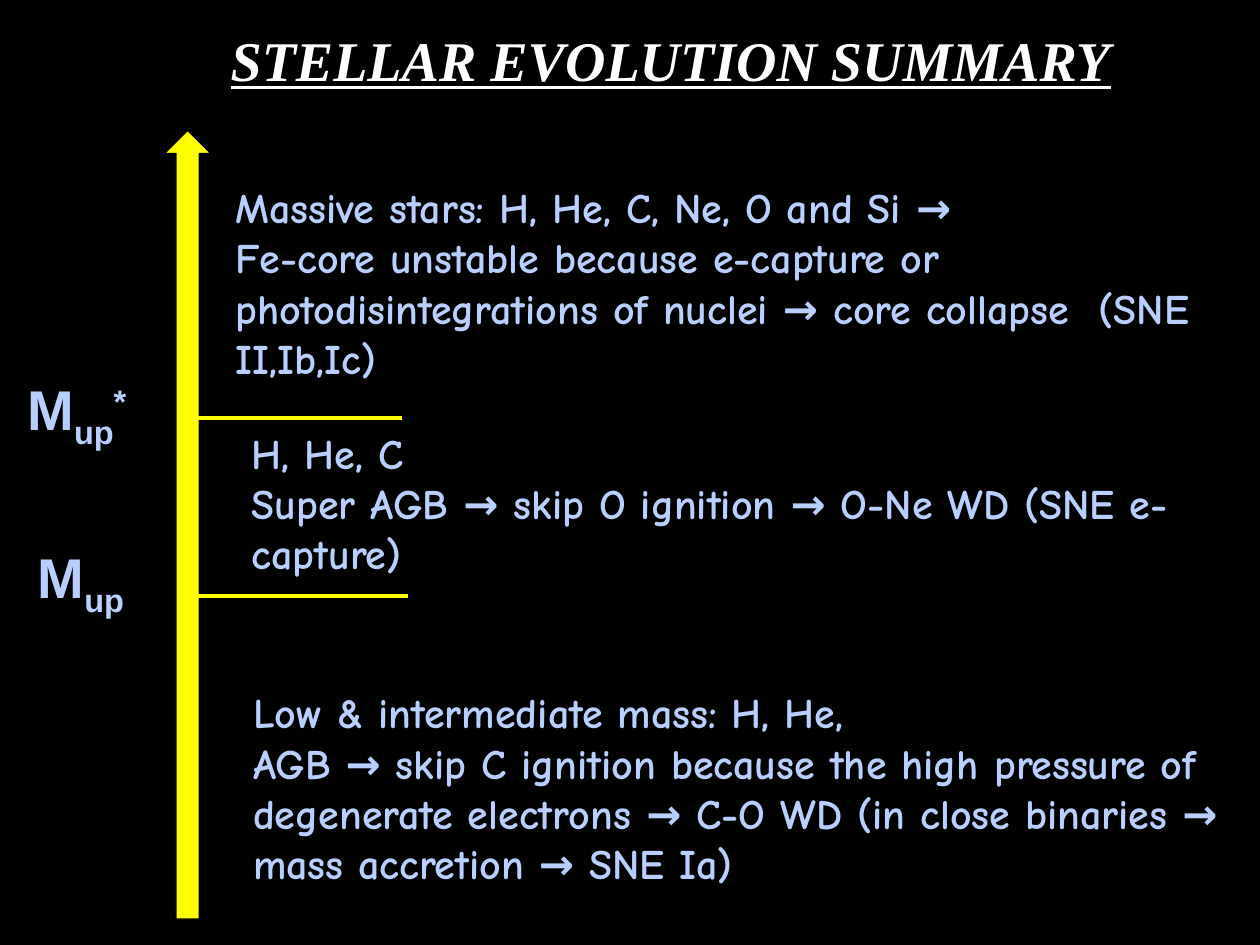
from dataclasses import dataclass

from lxml import etree
from pptx import Presentation
from pptx.dml.color import RGBColor
from pptx.enum import shapes, text
from pptx.oxml import ns
from pptx.util import Pt


@dataclass(frozen=True)
class Theme:
    back: RGBColor = RGBColor(0, 0, 0)
    axis: RGBColor = RGBColor(0xFF, 0xFF, 0)
    body: RGBColor = RGBColor(0xB8, 0xCF, 0xFF)
    head: RGBColor = RGBColor(0xFF, 0xFF, 0xFF)
    large: int = 32
    small: int = 24


THEME = Theme()

# Left, top, width, height in points
TITLE = (122.4, 10.8, 522, 46)
ARROW = (94, 74.5, 26.6, 450.7)

# Left and top of the tick, width, then the label box and its runs with baseline
TICKS = [
    ((107.3, 239, 122.4), (8.6, 210.2, 76.3, 46), [("M", 0), ("up", -25), ("*", 30)]),
    ((110.9, 340.6, 122.4), (14.4, 306.7, 67.7, 46), [("M", 0), ("up", -25)]),
]

STAGES = [
    ((127.4, 100.1, 580.3, 123.8),
     "Massive stars: H, He, C, Ne, O and Si →\n"
     "Fe-core unstable because e-capture or photodisintegrations of nuclei"
     " → core collapse  (SNE II,Ib,Ic)"),
    ((136.8, 240.5, 546.5, 94.3),
     "H, He, C\n"
     "Super AGB → skip O ignition → O-Ne WD (SNE e-capture)"),
    ((137.5, 388.8, 579.6, 123.8),
     "Low & intermediate mass: H, He,\n"
     "AGB → skip C ignition because the high pressure of degenerate electrons"
     " → C-O WD (in close binaries → mass accretion → SNE Ia)"),
]


def add_frame(slide, box, wrap):
    frame = slide.shapes.add_textbox(*map(Pt, box)).text_frame
    frame.word_wrap = wrap
    frame.auto_size = text.MSO_AUTO_SIZE.SHAPE_TO_FIT_TEXT
    return frame


def style(run, face, size, color):
    font = run.font
    font.name, font.size, font.bold = face, Pt(size), True
    font.color.rgb = color


def add_title(slide, box):
    frame = add_frame(slide, box, False)
    frame.text = "STELLAR EVOLUTION SUMMARY"
    line = frame.paragraphs[0]
    line.alignment = text.PP_ALIGN.CENTER
    run = line.runs[0]
    style(run, "Times New Roman", THEME.large, THEME.head)
    run.font.italic = run.font.underline = True


def add_arrow(slide, box):
    arrow = slide.shapes.add_shape(shapes.MSO_SHAPE.UP_ARROW, *map(Pt, box))
    arrow.shadow.inherit = False
    arrow.fill.solid()
    arrow.fill.fore_color.rgb = THEME.axis
    arrow.line.color.rgb = THEME.back
    arrow.line.width = Pt(0.75)


def add_tick(slide, left, top, width):
    tick = slide.shapes.add_connector(
        shapes.MSO_CONNECTOR.STRAIGHT, Pt(left), Pt(top), Pt(left + width), Pt(top))
    tick.line.color.rgb = THEME.axis
    tick.line.width = Pt(2.5)
    etree.SubElement(tick._element.spPr, ns.qn("a:effectLst"))


def add_label(slide, box, parts):
    """Mass symbol with its subscript and superscript."""
    line = add_frame(slide, box, False).paragraphs[0]
    for word, shift in parts:
        run = line.add_run()
        run.text = word
        style(run, "Arial", THEME.large, THEME.body)
        if shift:
            run.font._element.set("baseline", str(shift * 1000))


def add_stage(slide, box, words):
    frame = add_frame(slide, box, True)
    frame.text = words
    for line in frame.paragraphs:
        style(line.runs[0], "Comic Neue", THEME.small, THEME.body)


def main():
    deck = Presentation()
    deck.slide_width, deck.slide_height = Pt(720), Pt(540)
    slide = deck.slides.add_slide(deck.slide_layouts[6])
    fill = slide.background.fill
    fill.solid()
    fill.fore_color.rgb = THEME.back

    add_arrow(slide, ARROW)
    for tick, box, parts in TICKS:
        add_tick(slide, *tick)
        add_label(slide, box, parts)
    for box, words in STAGES:
        add_stage(slide, box, words)
    add_title(slide, TITLE)
    deck.save("out.pptx")


if __name__ == "__main__":
    main()
